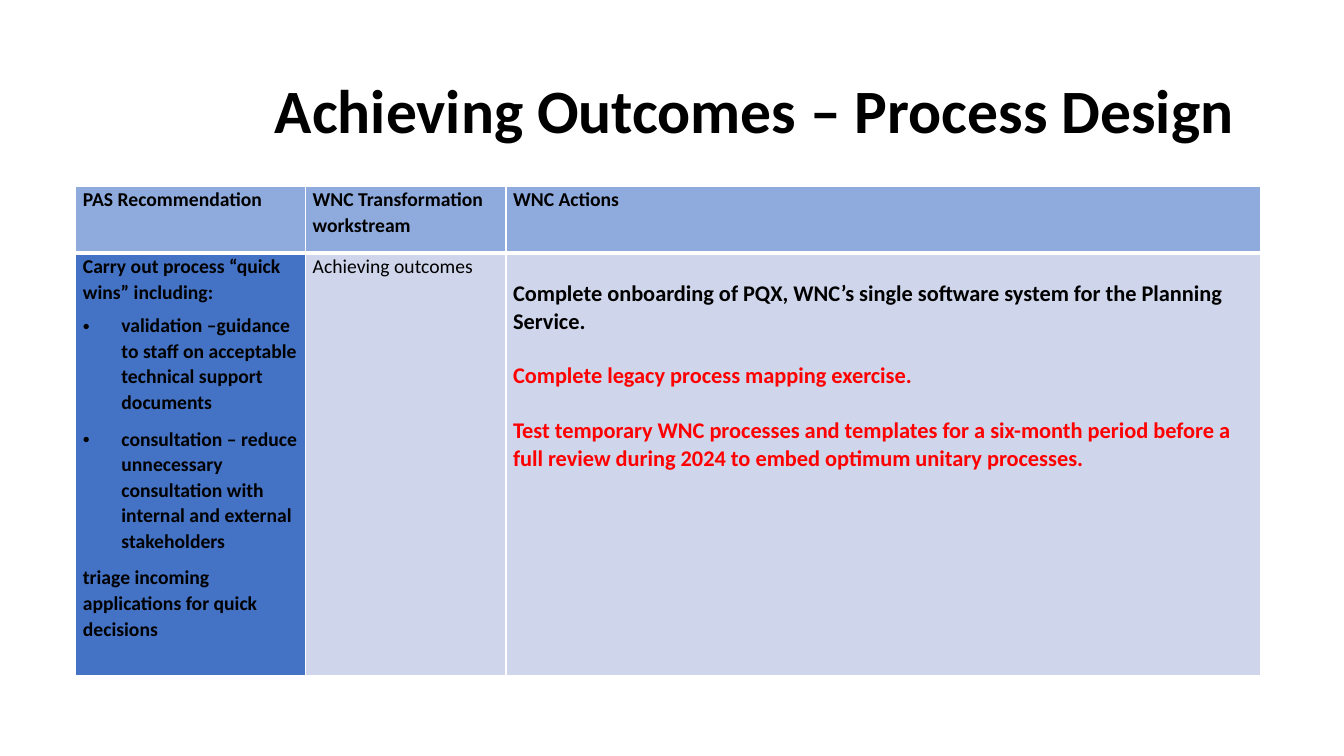
from dataclasses import dataclass

from lxml.etree import SubElement
from pptx import Presentation
from pptx.dml.color import RGBColor as Rgb
from pptx.enum.text import MSO_ANCHOR as Anchor
from pptx.oxml import parse_xml
from pptx.oxml.ns import nsdecls, qn
from pptx.table import _Cell as Cell
from pptx.text.text import TextFrame, _Paragraph as TextParagraph
from pptx.util import Cm, Pt

FONT = "Calibri"
COLORS = {
    "text": "000000",
    "highlight": "FF0000",
    "header": "8FAADC",
    "recommendation": "4472C4",
    "body": "CFD5EA",
    "border": "FFFFFF",
}
COLUMN_WIDTHS = (5.79, 5.05, 19.02)
ROW_HEIGHTS = (1.68, 10.64)
SIDE_MARGIN = 0.18
BULLET_INDENT = 0.97
ACTION_LINE = 19.5  # height in points of one line of action text


@dataclass
class Item:
    text: str
    size: float = 14
    bold: bool = True
    color: str = "text"
    line_spacing: float = 1.07
    before: float = 0
    after: float = 8
    bullet: bool = False


@dataclass
class CellContent:
    fill: str
    items: list[Item]
    top_margin: float = 0


def action(text: str, color: str = "text", before: float = ACTION_LINE) -> Item:
    return Item(text, 16, color=color, line_spacing=1.0, before=before, after=0)


ROWS = [
    [
        CellContent("header", [Item("PAS Recommendation", before=6, after=6)]),
        CellContent("header", [Item("WNC Transformation workstream")]),
        CellContent("header", [Item("WNC Actions")]),
    ],
    [
        CellContent("recommendation", [
            Item("Carry out process “quick wins” including:", before=6, after=6),
            Item("validation –guidance to staff on acceptable technical support documents",
                 bullet=True),
            Item("consultation – reduce unnecessary consultation with internal and "
                 "external stakeholders", bullet=True),
            Item("triage incoming applications for quick decisions"),
        ]),
        CellContent("body", [Item("Achieving outcomes", bold=False)]),
        CellContent("body", [
            action("Complete onboarding of PQX, WNC’s single software system for the "
                   "Planning Service.", before=0),
            action("Complete legacy process mapping exercise.", "highlight"),
            action("Test temporary WNC processes and templates for a six-month period before "
                   "a full review during 2024 to embed optimum unitary processes.", "highlight"),
        ], top_margin=0.69),
    ],
]


def add_bullet(paragraph: TextParagraph) -> None:
    properties = paragraph._p.get_or_add_pPr()
    properties.set("marL", str(Cm(BULLET_INDENT)))
    properties.set("indent", str(-Cm(BULLET_INDENT)))
    SubElement(properties, qn("a:buFont"), typeface="Arial")
    SubElement(properties, qn("a:buChar"), char="•")


def write_items(frame: TextFrame, items: list[Item]) -> None:
    frame.word_wrap = True
    for index, item in enumerate(items):
        paragraph = frame.add_paragraph() if index else frame.paragraphs[0]
        paragraph.line_spacing = item.line_spacing
        paragraph.space_before = Pt(item.before)
        paragraph.space_after = Pt(item.after)
        if item.bullet:
            add_bullet(paragraph)
        run = paragraph.add_run()
        run.text = item.text
        run.font.name = FONT
        run.font.size = Pt(item.size)
        run.font.bold = item.bold
        run.font.color.rgb = Rgb.from_string(COLORS[item.color])


def set_borders(cell: Cell, top: float, bottom: float) -> None:
    properties = cell._tc.get_or_add_tcPr()
    widths = {"lnL": 1, "lnR": 1, "lnT": top, "lnB": bottom}
    for index, (side, width) in enumerate(widths.items()):
        properties.insert(index, parse_xml(
            f'<a:{side} {nsdecls("a")} w="{Pt(width)}"><a:solidFill>'
            f'<a:srgbClr val="{COLORS["border"]}"/></a:solidFill></a:{side}>'))


def fill_cell(cell: Cell, content: CellContent) -> None:
    cell.margin_left = cell.margin_right = Cm(SIDE_MARGIN)
    cell.margin_top = Cm(content.top_margin)
    cell.margin_bottom = Cm(0)
    cell.vertical_anchor = Anchor.TOP
    cell.fill.solid()
    cell.fill.fore_color.rgb = Rgb.from_string(COLORS[content.fill])
    write_items(cell.text_frame, content.items)


def main() -> None:
    presentation = Presentation()
    presentation.slide_width = Cm(33.87)
    presentation.slide_height = Cm(19.05)
    slide = presentation.slides.add_slide(presentation.slide_layouts[6])

    # Title
    title = slide.shapes.add_textbox(Cm(6.68), Cm(1.02), Cm(24.87), Cm(3.68))
    title.text_frame.vertical_anchor = Anchor.MIDDLE
    write_items(title.text_frame, [
        Item("Achieving Outcomes – Process Design", 44, line_spacing=0.9, after=0)])

    # Table of recommendations and actions
    table = slide.shapes.add_table(
        len(ROW_HEIGHTS), len(COLUMN_WIDTHS), Cm(1.91), Cm(4.7),
        Cm(sum(COLUMN_WIDTHS)), Cm(sum(ROW_HEIGHTS))).table
    table.horz_banding = False
    for column, width in zip(table.columns, COLUMN_WIDTHS):
        column.width = Cm(width)
    for row, height in zip(table.rows, ROW_HEIGHTS):
        row.height = Cm(height)
    for row_index, contents in enumerate(ROWS):
        top, bottom = (3, 1) if row_index else (1, 3)
        for column_index, content in enumerate(contents):
            cell = table.cell(row_index, column_index)
            fill_cell(cell, content)
            set_borders(cell, top, bottom)

    presentation.save("out.pptx")


if __name__ == "__main__":
    main()
